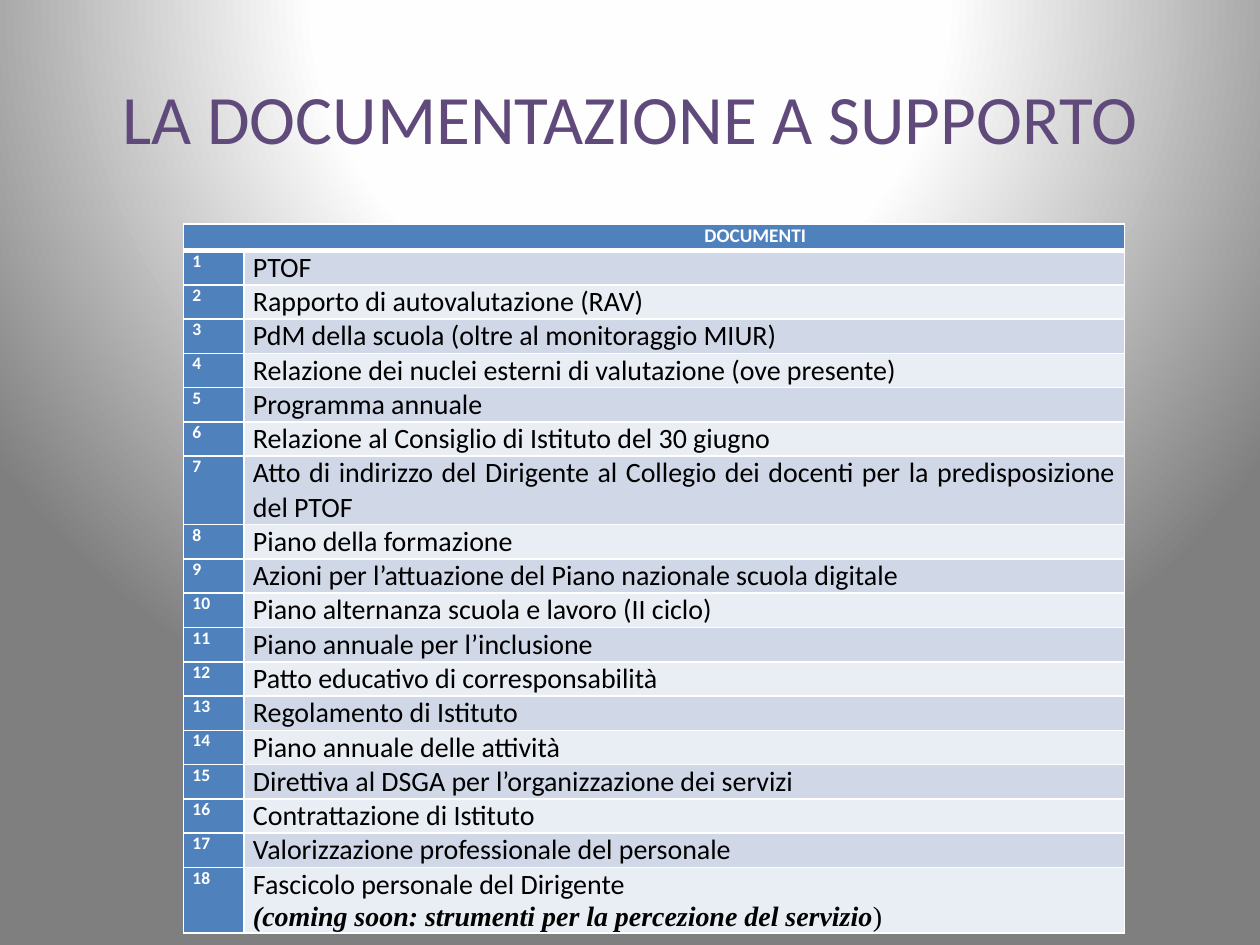
"""Build a slide with a numbered table of supporting school documents."""
from dataclasses import dataclass

from pptx import Presentation
from pptx import util as u
from pptx.dml.color import RGBColor
from pptx.enum import text
from pptx.oxml import ns, parse_xml

PURPLE = RGBColor(0x60, 0x4A, 0x7B)
BLUE = RGBColor(0x4F, 0x81, 0xBD)
DARK_BAND = RGBColor(0xD0, 0xD8, 0xE8)
LIGHT_BAND = RGBColor(0xE9, 0xED, 0xF4)
WHITE = RGBColor(0xFF, 0xFF, 0xFF)
BLACK = RGBColor(0, 0, 0)


@dataclass(frozen=True)
class Style:
    size: float
    color: RGBColor
    bold: bool = False
    italic: bool = False
    name: str = "Calibri"


TITLE = Style(39.6, PURPLE)
HEADER = Style(11, WHITE, bold=True)
NUMBER = Style(10, WHITE, bold=True)
BODY = Style(16, BLACK)
NOTE = Style(16, BLACK, bold=True, italic=True, name="Times New Roman")
NOTE_END = Style(16, BLACK, name="Times New Roman")

DOCUMENTS = [
    "PTOF",
    "Rapporto di autovalutazione (RAV)",
    "PdM della scuola (oltre al monitoraggio MIUR)",
    "Relazione dei nuclei esterni di valutazione (ove presente)",
    "Programma annuale",
    "Relazione al Consiglio di Istituto del 30 giugno",
    "Atto di indirizzo del Dirigente al Collegio dei docenti per la predisposizione del PTOF",
    "Piano della formazione",
    "Azioni per l’attuazione del Piano nazionale scuola digitale",
    "Piano alternanza scuola e lavoro (II ciclo)",
    "Piano annuale per l’inclusione",
    "Patto educativo di corresponsabilità",
    "Regolamento di Istituto",
    "Piano annuale delle attività",
    "Direttiva al DSGA per l’organizzazione dei servizi",
    "Contrattazione di Istituto",
    "Valorizzazione professionale del personale",
    "Fascicolo personale del Dirigente",
]
COLUMN_WIDTHS = (u.Cm(1.22), u.Cm(17.75))
HEADER_HEIGHT, ROW_HEIGHT, LAST_HEIGHT = u.Cm(0.53), u.Cm(0.48), u.Cm(0.69)
HEADER_INDENT = u.Cm(2.03)


def set_attributes(target, values: dict) -> None:
    for name, value in values.items():
        setattr(target, name, value)


def add_run(paragraph, content: str, style: Style, alignment=text.PP_ALIGN.JUSTIFY) -> None:
    paragraph.alignment = alignment
    run = paragraph.add_run()
    run.text = content
    set_attributes(run.font, {
        "size": u.Pt(style.size), "bold": style.bold,
        "italic": style.italic, "name": style.name,
    })
    run.font.color.rgb = style.color


def add_background(slide) -> None:
    stops = "".join(
        f'<a:gs pos="{position * 1000}"><a:srgbClr val="{color}"/></a:gs>'
        for position, color in ((0, "FFFFFF"), (40, "FEFEFE"), (100, "7F7F7F"))
    )
    slide.element.cSld.insert(0, parse_xml(
        f'<p:bg {ns.nsdecls("p", "a")}><p:bgPr><a:gradFill rotWithShape="1">'
        f'<a:gsLst>{stops}</a:gsLst><a:path path="circle">'
        '<a:fillToRect l="50000" t="-80000" r="50000" b="180000"/></a:path>'
        '</a:gradFill><a:effectLst/></p:bgPr></p:bg>'
    ))


def format_cell(cell, row: int, column: int) -> None:
    set_attributes(cell, {
        "margin_left": u.Cm(0.18), "margin_right": u.Cm(0.18),
        "margin_top": 0, "margin_bottom": 0,
        "vertical_anchor": text.MSO_ANCHOR.TOP,
    })
    properties = cell._tc.get_or_add_tcPr()
    for side in "LRTB":
        heavy = (side, row) in (("B", 0), ("T", 1))
        properties.append(parse_xml(
            f'<a:ln{side} {ns.nsdecls("a")} w="{u.Pt(3 if heavy else 1)}">'
            f'<a:solidFill><a:srgbClr val="{WHITE}"/></a:solidFill></a:ln{side}>'
        ))
    cell.fill.solid()
    band = DARK_BAND if row % 2 else LIGHT_BAND
    cell.fill.fore_color.rgb = BLUE if row == 0 or column == 0 else band


def add_documents_table(slide) -> None:
    heights = [HEADER_HEIGHT, *[ROW_HEIGHT] * (len(DOCUMENTS) - 1), LAST_HEIGHT]
    table = slide.shapes.add_table(
        len(heights), len(COLUMN_WIDTHS), u.Cm(3.7), u.Cm(4.52),
        sum(COLUMN_WIDTHS), sum(heights),
    ).table
    for column, width in zip(table.columns, COLUMN_WIDTHS):
        column.width = width
    for row_index, height in enumerate(heights):
        table.rows[row_index].height = height
        for column_index in range(len(COLUMN_WIDTHS)):
            format_cell(table.cell(row_index, column_index), row_index, column_index)

    header = table.cell(0, 0)
    header.merge(table.cell(0, 1))
    paragraph = header.text_frame.paragraphs[0]
    add_run(paragraph, "DOCUMENTI", HEADER, text.PP_ALIGN.CENTER)
    paragraph._p.get_or_add_pPr().set("marL", str(HEADER_INDENT))
    paragraph.runs[0].font._element.set("cap", "small")

    for number, document in enumerate(DOCUMENTS, start=1):
        add_run(table.cell(number, 0).text_frame.paragraphs[0], str(number), NUMBER)
        add_run(table.cell(number, 1).text_frame.paragraphs[0], document, BODY)
    note = table.cell(len(DOCUMENTS), 1).text_frame.add_paragraph()
    add_run(note, "(coming soon: strumenti per la percezione del servizio", NOTE)
    add_run(note, ")", NOTE_END)


def main() -> None:
    presentation = Presentation()
    set_attributes(presentation, {"slide_width": u.Cm(25.4), "slide_height": u.Cm(19.05)})
    slide = presentation.slides.add_slide(presentation.slide_layouts[5])
    add_background(slide)
    title = slide.shapes.title
    set_attributes(title, {
        "left": u.Cm(1.27), "top": u.Cm(0.76),
        "width": u.Cm(22.86), "height": u.Cm(3.18),
    })
    title.text_frame.vertical_anchor = text.MSO_ANCHOR.MIDDLE
    add_run(title.text_frame.paragraphs[0], "LA DOCUMENTAZIONE A SUPPORTO",
            TITLE, text.PP_ALIGN.CENTER)
    add_documents_table(slide)
    presentation.save("out.pptx")


if __name__ == "__main__":
    main()
